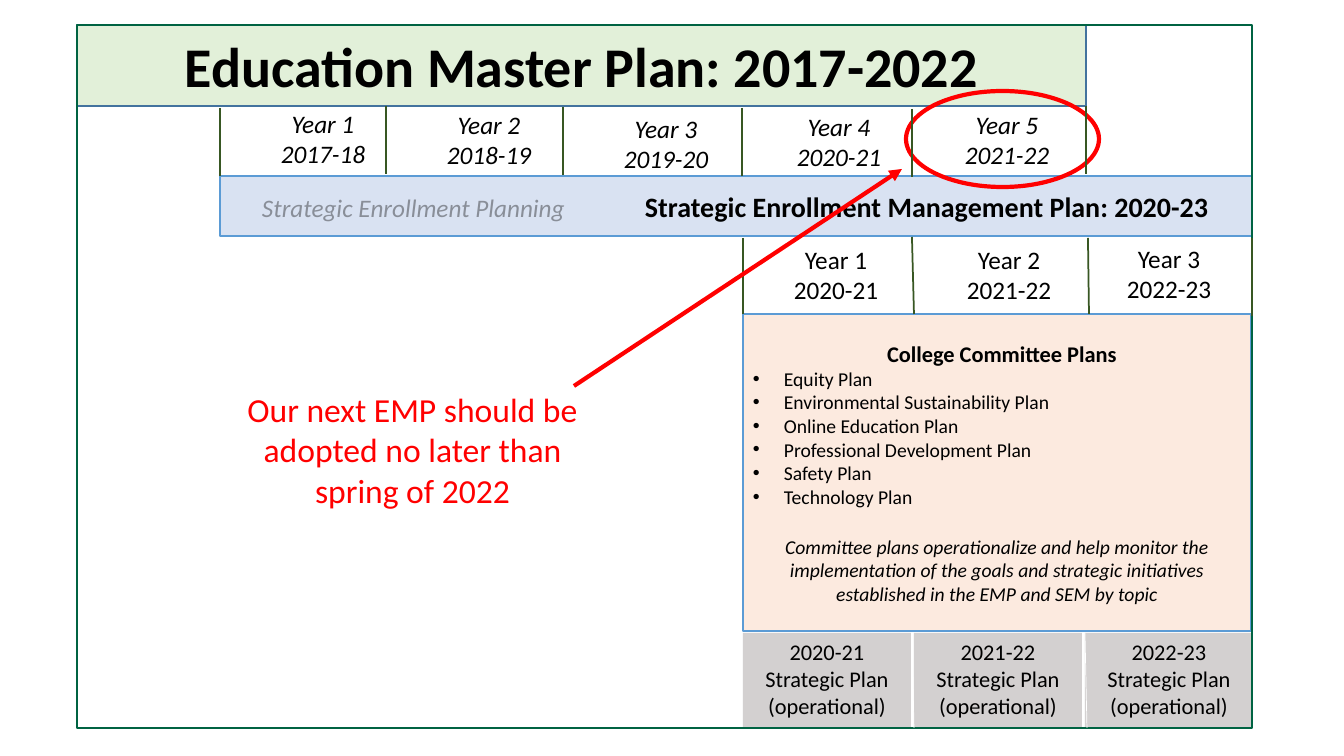
import pptx
import pptx.util
import pptx.dml.color
import pptx.enum.shapes
import pptx.enum.text
import pptx.oxml.ns
import lxml.etree

PX = 914400 / 100.8
INK = {
    "black": "000000", "white": "FFFFFF", "red": "FF0000", "mint": "E2F0D9",
    "navy": "43739E", "moss": "385723", "peach": "F8CBAD", "blue": "5B9BD5",
    "sky": "B4C7E7", "gray": "AFABAB", "green": "006342",
}
KIND = pptx.enum.shapes.MSO_SHAPE
ALIGN = pptx.enum.text.PP_ALIGN
ANCHOR = pptx.enum.text.MSO_ANCHOR
RGB = pptx.dml.color.RGBColor.from_string
qn = pptx.oxml.ns.qn


def draw(kind, box, fill=None, alpha=100, edge=None, width=1):
    """Add a preset shape; box is left, top, width, height in px."""
    shape = slide.shapes.add_shape(kind, *[round(n * PX) for n in box])
    shape.shadow.inherit = False
    if fill:
        shape.fill.solid()
        shape.fill.fore_color.rgb = RGB(INK[fill])
        color = shape._element.spPr.find(".//" + qn("a:srgbClr"))
        lxml.etree.SubElement(color, qn("a:alpha"), val=str(alpha * 1000))
    else:
        shape.fill.background()
    if edge:
        shape.line.color.rgb = RGB(INK[edge])
        shape.line.width = pptx.util.Pt(width)
    else:
        shape.line.fill.background()
    return shape


def write(frame, lines, size, color="black", italic=False):
    """Fill a text frame with centred paragraphs and return them."""
    frame.text = "\n".join(lines)
    for para in frame.paragraphs:
        para.alignment = ALIGN.CENTER
        para.font.name = "Calibri"
        para.font.size = pptx.util.Pt(size)
        para.font.italic = italic
        para.font.color.rgb = RGB(INK[color])
    return frame.paragraphs


deck = pptx.Presentation()
deck.slide_width = round(1344 * PX)
deck.slide_height = round(756 * PX)
slide = deck.slides.add_slide(deck.slide_layouts[5])

# Title bar
title = slide.shapes.title
title.left, title.top, title.width, title.height = [
    round(n * PX) for n in (77, 25, 1009, 81)]
title.fill.solid()
title.fill.fore_color.rgb = RGB(INK["mint"])
title.line.color.rgb = RGB(INK["navy"])
title.line.width = pptx.util.Pt(1)
title.text_frame.vertical_anchor = ANCHOR.MIDDLE
head = write(title.text_frame, ["Education Master Plan: 2017-2022"], 40)[0]
head.font.bold = True

# Years of both plans: left, top, number, span, italic
years = [
    (270, 103, 1, "2017-18", True), (436, 104, 2, "2018-19", True),
    (613, 108, 3, "2019-20", True), (786, 106, 4, "2020-21", True),
    (954, 104, 5, "2021-22", True), (783, 239, 1, "2020-21", False),
    (956, 239, 2, "2021-22", False), (1116, 238, 3, "2022-23", False),
]
for left, top, year, span, italic in years:
    label = slide.shapes.add_textbox(
        *[round(n * PX) for n in (left, top, 106, 72)])
    label.text_frame.word_wrap = False
    write(label.text_frame, [f"Year {year}", span], 18, italic=italic)

# Enrollment band
band = draw(KIND.RECTANGLE, (220, 176, 1032, 60), "sky", 50, "blue")
frame = band.text_frame
frame.margin_left = round(42 * PX)
frame.margin_right = 0
line = write(frame, [""], 20)[0]
line.alignment = ALIGN.LEFT
tabs = lxml.etree.Element(qn("a:tabLst"))
lxml.etree.SubElement(tabs, qn("a:tab"), pos=str(round(383 * PX)), algn="l")
line._p.pPr.insert(0, tabs)
past = line.add_run()
past.text = "Strategic Enrollment Planning\t"
past.font.size = pptx.util.Pt(18)
past.font.italic = True
past.font.color.rgb = RGB(INK["black"])
color = past._r.find(".//" + qn("a:srgbClr"))
lxml.etree.SubElement(color, qn("a:alpha"), val="37000")
plan = line.add_run()
plan.text = "Strategic Enrollment Management Plan: 2020-23"
plan.font.bold = True

# Committee plans
panel = draw(KIND.RECTANGLE, (743, 314, 508, 317), "peach", 39, "blue")
frame = panel.text_frame
frame.vertical_anchor = ANCHOR.TOP
frame.margin_top = round(26 * PX)
topics = ["Equity Plan", "Environmental Sustainability Plan",
          "Online Education Plan", "Professional Development Plan",
          "Safety Plan", "Technology Plan"]
note = ("Committee plans operationalize and help monitor the implementation "
        "of the goals and strategic initiatives established in the EMP and "
        "SEM by topic")
head, *items, close = write(
    frame, ["College Committee Plans", *topics, note], 14)
head.font.size = pptx.util.Pt(16)
head.font.bold = True
head._p.pPr.set("marL", str(round(10 * PX)))
for item in items:
    item.alignment = ALIGN.LEFT
    props = item._p.pPr
    props.set("marL", str(round(31 * PX)))
    props.set("indent", str(round(-31 * PX)))
    props.insert(0, lxml.etree.Element(qn("a:buFont"), typeface="Arial"))
    props.insert(1, lxml.etree.Element(qn("a:buChar"), char="•"))
close.font.italic = True
close.space_before = pptx.util.Pt(19)

# Yearly strategic plans
for col, span in enumerate(["2020-21", "2021-22", "2022-23"]):
    tile = draw(KIND.RECTANGLE, (743 + 171 * col, 633, 168, 95), "gray", 55)
    tile.text_frame.vertical_anchor = ANCHOR.TOP
    write(tile.text_frame, [span, "Strategic Plan", "(operational)"], 16)

# Frame, callout and ring
draw(KIND.RECTANGLE, (77, 25, 1175, 703), edge="green")
call = slide.shapes.add_textbox(
    *[round(n * PX) for n in (237, 384, 351, 132)])
call.text_frame.word_wrap = True
write(call.text_frame,
      ["Our next EMP should be adopted no later than spring of 2022"],
      24, "red")
draw(KIND.OVAL, (906, 91, 193, 96), edge="red", width=3)

# Dividers and the arrow: from x, y to x, y, colour, width
rules = [(x, y, x, y + 68, "moss", 1.25) for x, y in [
    (220, 108), (386, 106), (563, 107), (742, 108), (912, 109), (1086, 106)]]
rules += [
    (743, 238, 743, 314, "moss", 1.25), (912, 237, 914, 314, "moss", 1.25),
    (1088, 238, 1089, 314, "moss", 1.25),
    (1252, 238, 1252, 316, "moss", 1.25),
    (912, 633, 914, 728, "white", 0.5), (1085, 633, 1087, 728, "white", 0.5),
    (574, 386, 902, 169, "red", 3),
]
for *ends, color, width in rules:
    rule = slide.shapes.add_connector(
        pptx.enum.shapes.MSO_CONNECTOR.STRAIGHT,
        *[round(n * PX) for n in ends])
    rule.line.color.rgb = RGB(INK[color])
    rule.line.width = pptx.util.Pt(width)
    lxml.etree.SubElement(rule._element.spPr, qn("a:effectLst"))
    if color == "red":
        lxml.etree.SubElement(
            rule.line._get_or_add_ln(), qn("a:tailEnd"), type="triangle")

deck.save("out.pptx")
